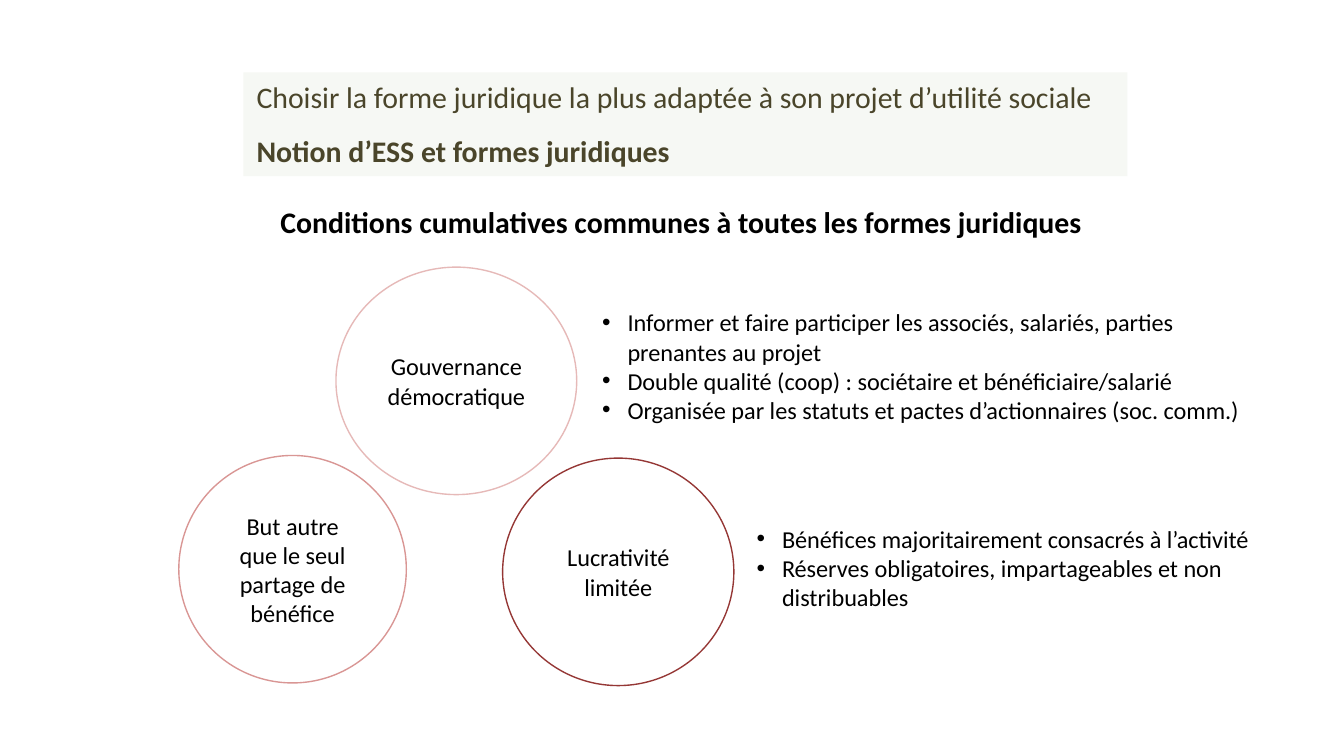
from typing import NamedTuple

from lxml.etree import SubElement
from pptx import Presentation
from pptx.dml.color import RGBColor
from pptx.enum.shapes import MSO_SHAPE
from pptx.enum.text import MSO_ANCHOR, PP_ALIGN
from pptx.oxml.ns import qn
from pptx.util import Cm, Pt

FONT = "Calibri"
BLACK = "000000"
BANNER_FILL = "F6F8F4"
BANNER_TEXT = "4A452A"
BODY_SIZE = 13
HEADING_SIZE = 16
BULLET_INDENT = Cm(0.48)


class Box(NamedTuple):
    """Position and size in centimetres."""
    left: float
    top: float
    width: float
    height: float

    def lengths(self):
        return [Cm(value) for value in self]


class Condition(NamedTuple):
    label: str
    box: Box
    line_color: str


class BulletList(NamedTuple):
    box: Box
    items: list[str]


CONDITIONS = [
    Condition("Gouvernance démocratique", Box(6.35, 5.05, 4.55, 4.3), "E6B9B8"),
    Condition("But autre que le seul partage de bénéfice",
              Box(3.38, 8.61, 4.3, 4.3), "D99694"),
    Condition("Lucrativité limitée", Box(9.5, 8.66, 4.37, 4.3), "953735"),
]

BULLET_LISTS = [
    BulletList(Box(14.05, 9.78, 10, 1.93), [
        "Bénéfices majoritairement consacrés à l’activité",
        "Réserves obligatoires, impartageables et non distribuables",
    ]),
    BulletList(Box(11.13, 5.69, 12.75, 2.49), [
        "Informer et faire participer les associés, salariés, parties prenantes au projet",
        "Double qualité (coop) : sociétaire et bénéficiaire/salarié",
        "Organisée par les statuts et pactes d’actionnaires (soc. comm.)",
    ]),
]


def color(value: str) -> RGBColor:
    return RGBColor.from_string(value)


def add_run(paragraph, text: str, size: int, text_color: str = BLACK, bold: bool = False) -> None:
    run = paragraph.add_run()
    run.text = text
    run.font.name = FONT
    run.font.size = Pt(size)
    run.font.bold = bold
    run.font.color.rgb = color(text_color)


def add_text_box(slide, box: Box):
    text_frame = slide.shapes.add_textbox(*box.lengths()).text_frame
    text_frame.word_wrap = True
    return text_frame


def add_bullet(paragraph) -> None:
    properties = paragraph._p.get_or_add_pPr()
    properties.set("marL", str(BULLET_INDENT))
    properties.set("indent", str(-BULLET_INDENT))
    SubElement(properties, qn("a:buFont"), typeface="Arial")
    SubElement(properties, qn("a:buChar"), char="•")


def add_condition(slide, condition: Condition) -> None:
    circle = slide.shapes.add_shape(MSO_SHAPE.OVAL, *condition.box.lengths())
    circle.shadow.inherit = False
    circle.fill.background()
    circle.line.color.rgb = color(condition.line_color)
    circle.line.width = Pt(0.75)
    circle.text_frame.word_wrap = True
    circle.text_frame.vertical_anchor = MSO_ANCHOR.MIDDLE
    paragraph = circle.text_frame.paragraphs[0]
    paragraph.alignment = PP_ALIGN.CENTER
    add_run(paragraph, condition.label, BODY_SIZE)


def add_bullet_list(slide, bullet_list: BulletList) -> None:
    text_frame = add_text_box(slide, bullet_list.box)
    for index, item in enumerate(bullet_list.items):
        paragraph = text_frame.add_paragraph() if index else text_frame.paragraphs[0]
        add_bullet(paragraph)
        add_run(paragraph, item, BODY_SIZE)


def add_heading(slide) -> None:
    text_frame = add_text_box(slide, Box(5.05, 3.73, 15.77, 0.94))
    add_run(text_frame.paragraphs[0],
            "Conditions cumulatives communes à toutes les formes juridiques",
            HEADING_SIZE, bold=True)


def add_banner(slide) -> None:
    banner = slide.shapes.add_shape(MSO_SHAPE.RECTANGLE, *Box(4.6, 1.37, 16.71, 1.96).lengths())
    banner.shadow.inherit = False
    banner.fill.solid()
    banner.fill.fore_color.rgb = color(BANNER_FILL)
    banner.line.fill.background()
    text_frame = banner.text_frame
    text_frame.word_wrap = True
    text_frame.vertical_anchor = MSO_ANCHOR.TOP
    topic = text_frame.paragraphs[0]
    section = text_frame.add_paragraph()
    section.line_spacing = 1.5
    for paragraph in (topic, section):
        paragraph.alignment = PP_ALIGN.LEFT
    add_run(topic, "Choisir la forme juridique la plus adaptée à son projet d’utilité sociale",
            HEADING_SIZE, BANNER_TEXT)
    add_run(section, "Notion d’ESS et formes juridiques", HEADING_SIZE, BANNER_TEXT, bold=True)


def main() -> None:
    presentation = Presentation()
    presentation.slide_width = Cm(25.4)
    presentation.slide_height = Cm(14.29)
    slide = presentation.slides.add_slide(presentation.slide_layouts[6])
    for condition in CONDITIONS:
        add_condition(slide, condition)
    add_heading(slide)
    for bullet_list in BULLET_LISTS:
        add_bullet_list(slide, bullet_list)
    add_banner(slide)
    presentation.save("out.pptx")


if __name__ == "__main__":
    main()
